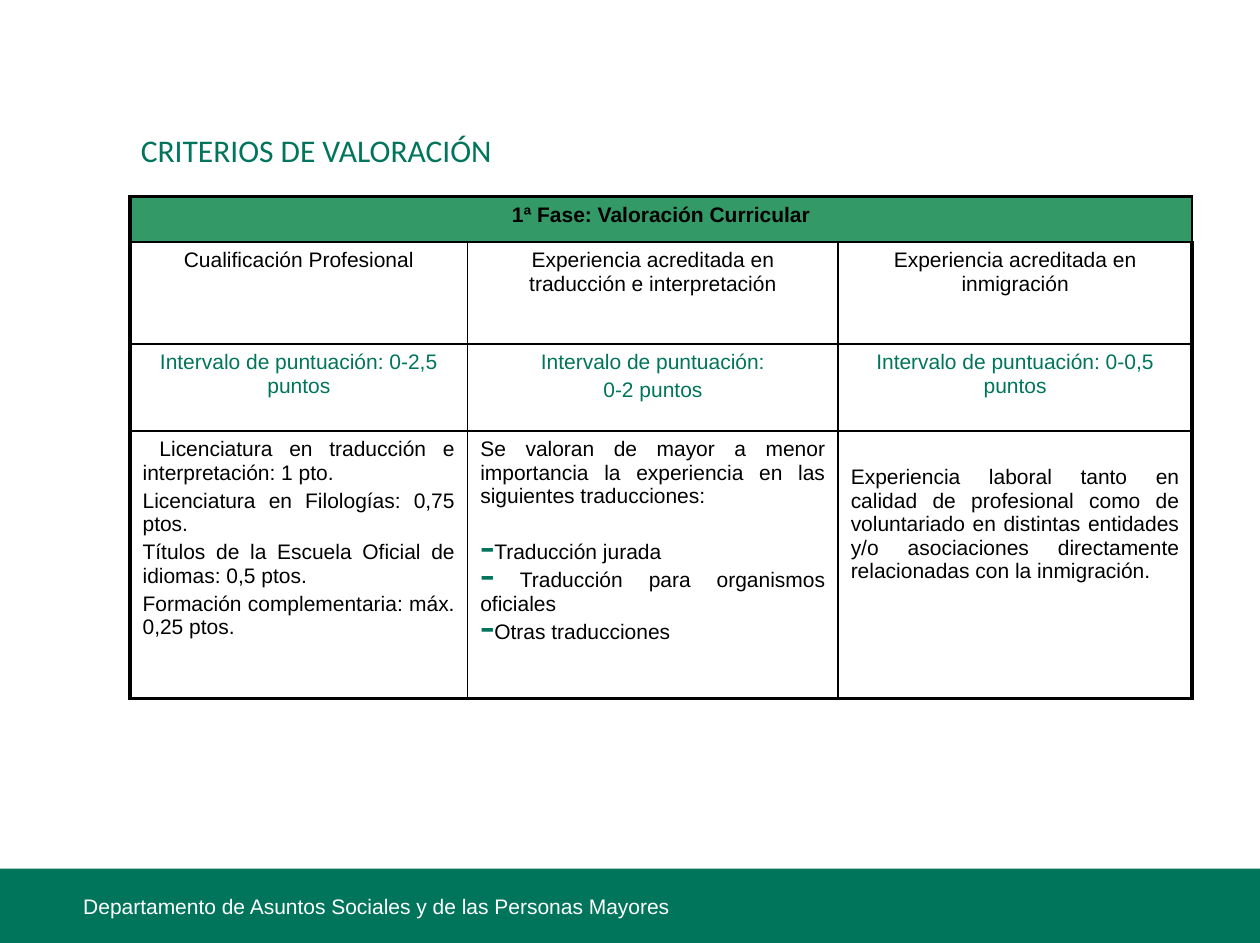
from dataclasses import dataclass

from lxml import etree
from pptx import Presentation
from pptx.dml.color import RGBColor
from pptx.enum.shapes import MSO_SHAPE
from pptx.enum.text import MSO_ANCHOR, PP_ALIGN
from pptx.oxml.ns import qn
from pptx.util import Pt

RECTANGLE = MSO_SHAPE.RECTANGLE
MIDDLE = MSO_ANCHOR.MIDDLE
CENTER, JUSTIFY = PP_ALIGN.CENTER, PP_ALIGN.JUSTIFY


@dataclass(frozen=True)
class Theme:
    """Colours, fonts and sizes of the slide, in points."""
    green: str = "00755C"
    header: str = "339966"
    black: str = "000000"
    white: str = "FFFFFF"
    body_font: str = "Arial"
    title_font: str = "Calibri"
    body: float = 12
    title: float = 18
    outer_line: float = 2.25
    inner_line: float = 1
    paragraph_gap: float = 2.6
    blank_line: float = 16


THEME = Theme()
COLUMN_WIDTHS = (193, 211.7, 202.3)
ROW_HEIGHTS = (25.9, 58.3, 49.7, 152.6)
PHASE = "1ª Fase: Valoración Curricular"
CRITERIA = (
    "Cualificación Profesional",
    "Experiencia acreditada en traducción e interpretación",
    "Experiencia acreditada en inmigración",
)
INTERVALS = (
    ("Intervalo de puntuación: 0-2,5 puntos",),
    ("Intervalo de puntuación:", "0-2 puntos"),
    ("Intervalo de puntuación: 0-0,5 puntos",),
)
QUALIFICATIONS = (
    " Licenciatura en traducción e interpretación: 1 pto.",
    "Licenciatura en Filologías: 0,75 ptos.",
    "Títulos de la Escuela Oficial de idiomas: 0,5 ptos.",
    "Formación complementaria: máx. 0,25 ptos.",
)
TRANSLATION_INTRO = (
    "Se valoran de mayor a menor importancia la experiencia en las siguientes traducciones:"
)
TRANSLATIONS = ("Traducción jurada", " Traducción para organismos oficiales", "Otras traducciones")
IMMIGRATION = (
    "Experiencia laboral tanto en calidad de profesional como de voluntariado en distintas "
    "entidades y/o asociaciones directamente relacionadas con la inmigración."
)


def style_font(paragraph, color, size=THEME.body, name=THEME.body_font, bold=False):
    """Set the font of a whole paragraph."""
    font = paragraph.font
    font.name, font.size, font.bold = name, Pt(size), bold
    font.color.rgb = RGBColor.from_string(color)


def add_dash(paragraph):
    """Give a paragraph a large green dash bullet."""
    properties = paragraph._p.get_or_add_pPr()
    properties.set("marL", "0")
    properties.set("indent", "0")
    color = etree.SubElement(properties, qn("a:buClr"))
    etree.SubElement(color, qn("a:srgbClr"), val=THEME.green)
    etree.SubElement(properties, qn("a:buSzPct"), val="200000")
    etree.SubElement(properties, qn("a:buChar"), char="-")


def write_cell(cell, lines, alignment=CENTER, color=THEME.black, bold=False, dashes=()):
    """Write one paragraph per line, with dashes on the given lines."""
    frame = cell.text_frame
    for index, line in enumerate((*lines, *dashes)):
        paragraph = frame.add_paragraph() if index else frame.paragraphs[0]
        paragraph.text = line
        paragraph.alignment = alignment
        if index:
            gap = THEME.blank_line if dashes and index == len(lines) else 0
            paragraph.space_before = Pt(THEME.paragraph_gap + gap)
        if index >= len(lines):
            add_dash(paragraph)
        style_font(paragraph, color, bold=bold)


def draw_borders(cell, outer_sides):
    """Draw the four borders of a cell, heavier on the outer sides."""
    properties = cell._tc.get_or_add_tcPr()
    for index, side in enumerate("LRTB"):
        width = THEME.outer_line if side in outer_sides else THEME.inner_line
        line = etree.Element(qn(f"a:ln{side}"), w=str(Pt(width)))
        fill = etree.SubElement(line, qn("a:solidFill"))
        etree.SubElement(fill, qn("a:srgbClr"), val=THEME.black)
        properties.insert(index, line)


def format_grid(table):
    """Set the fills and borders of every cell."""
    last_row, last_column = len(ROW_HEIGHTS) - 1, len(COLUMN_WIDTHS) - 1
    for row in range(last_row + 1):
        for column in range(last_column + 1):
            cell = table.cell(row, column)
            if row:
                cell.fill.background()
            else:
                cell.fill.solid()
                cell.fill.fore_color.rgb = RGBColor.from_string(THEME.header)
            edges = {"L": column == 0, "R": column == last_column,
                     "T": row == 0, "B": row == last_row}
            draw_borders(cell, [side for side, outer in edges.items() if outer])


def add_criteria_table(slide, left, top, width, height):
    """Add the table of assessment criteria."""
    shape = slide.shapes.add_table(len(ROW_HEIGHTS), len(COLUMN_WIDTHS),
                                   Pt(left), Pt(top), Pt(width), Pt(height))
    table = shape.table
    table.first_row = table.horz_banding = False
    for column, column_width in zip(table.columns, COLUMN_WIDTHS):
        column.width = Pt(column_width)
    for row, row_height in zip(table.rows, ROW_HEIGHTS):
        row.height = Pt(row_height)
    format_grid(table)
    table.cell(0, 0).merge(table.cell(0, len(COLUMN_WIDTHS) - 1))

    write_cell(table.cell(0, 0), [PHASE], bold=True)
    for column, (criterion, interval) in enumerate(zip(CRITERIA, INTERVALS)):
        write_cell(table.cell(1, column), [criterion])
        write_cell(table.cell(2, column), interval, color=THEME.green)
    write_cell(table.cell(3, 0), QUALIFICATIONS, JUSTIFY)
    write_cell(table.cell(3, 1), [TRANSLATION_INTRO], JUSTIFY, dashes=TRANSLATIONS)
    immigration_cell = table.cell(3, 2)
    immigration_cell.margin_top = Pt(3.6 + THEME.blank_line)
    write_cell(immigration_cell, [IMMIGRATION], JUSTIFY)


def add_title(slide, left, top, width, height):
    """Add the slide title."""
    frame = slide.shapes.add_textbox(Pt(left), Pt(top), Pt(width), Pt(height)).text_frame
    frame.word_wrap = True
    paragraph = frame.paragraphs[0]
    paragraph.text = "CRITERIOS DE VALORACIÓN"
    style_font(paragraph, THEME.green, THEME.title, THEME.title_font)


def add_footer(slide, left, top, width, height):
    """Add the green band with the department name."""
    band = slide.shapes.add_shape(RECTANGLE, Pt(left), Pt(top), Pt(width), Pt(height))
    band.shadow.inherit = False
    band.fill.solid()
    band.fill.fore_color.rgb = RGBColor.from_string(THEME.green)
    band.line.fill.background()

    label = slide.shapes.add_textbox(Pt(left + 49), Pt(top + 13), Pt(525.6), Pt(17.3))
    frame = label.text_frame
    frame.word_wrap = True
    frame.vertical_anchor = MIDDLE
    frame.margin_left = frame.margin_right = frame.margin_top = frame.margin_bottom = 0
    paragraph = frame.paragraphs[0]
    paragraph.text = "Departamento de Asuntos Sociales y de las Personas Mayores"
    style_font(paragraph, THEME.white)


def main():
    """Build and save the presentation."""
    presentation = Presentation()
    presentation.slide_width, presentation.slide_height = Pt(720), Pt(538.6)
    slide = presentation.slides.add_slide(presentation.slide_layouts[6])
    add_footer(slide, -1.4, 496.1, 721.4, 42.5)
    add_criteria_table(slide, 74.3, 112.4, sum(COLUMN_WIDTHS), sum(ROW_HEIGHTS))
    add_title(slide, 73.4, 71.3, 272.2, 28.8)
    presentation.save("out.pptx")


if __name__ == "__main__":
    main()
